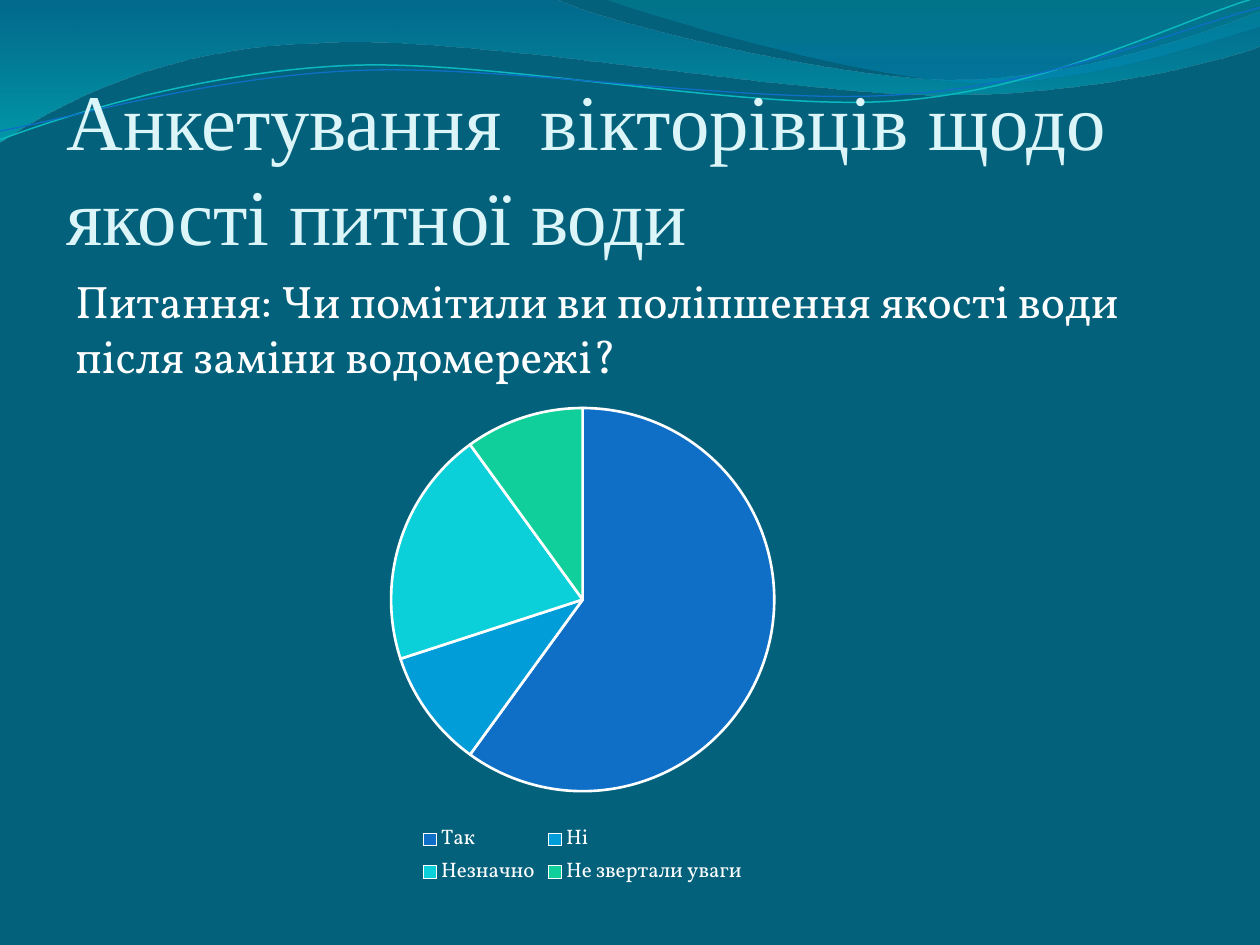
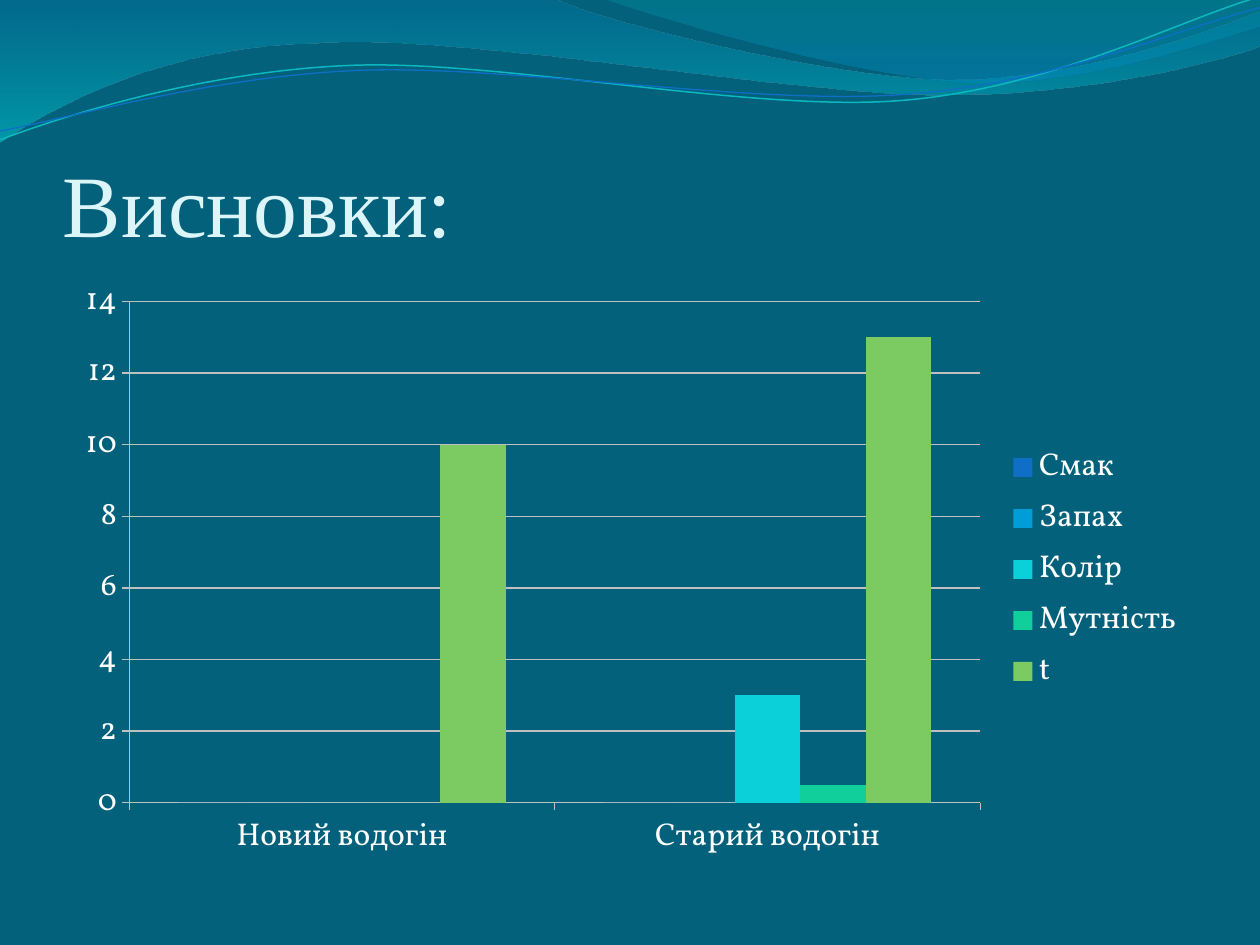
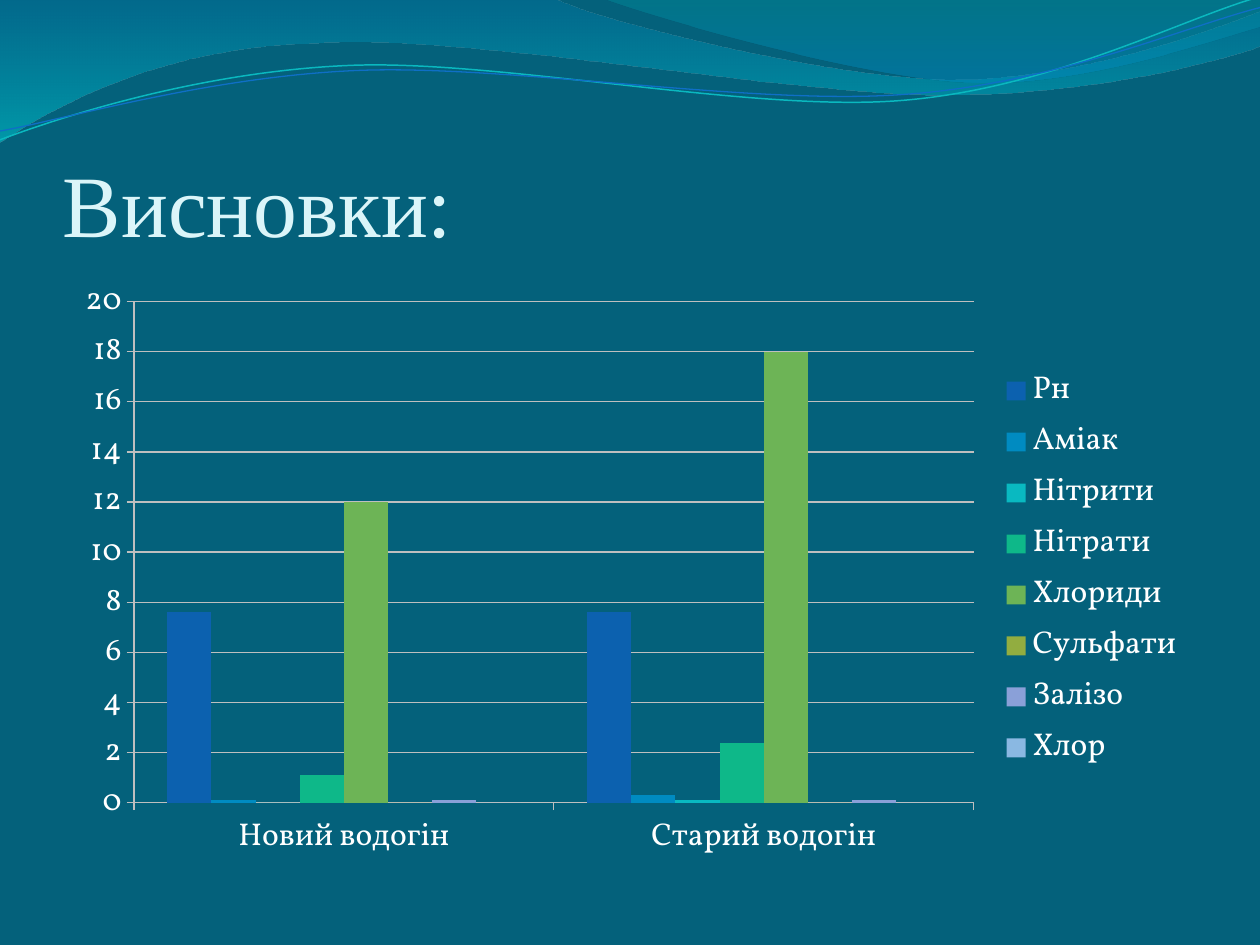
from dataclasses import dataclass

from lxml.etree import SubElement
from pptx import Presentation
from pptx.chart.data import CategoryChartData
from pptx.dml.color import RGBColor
from pptx.enum.chart import XL_CHART_TYPE, XL_LEGEND_POSITION, XL_TICK_MARK
from pptx.enum.text import MSO_ANCHOR
from pptx.oxml.ns import qn
from pptx.util import Pt

PX = 9144


@dataclass(frozen=True)
class Theme:
    """Colours, fonts and type sizes shared by the slides."""
    background: str = "04617B"
    title: str = "DBF5F9"
    text: str = "FFFFFF"
    grid: str = "BFBFBF"
    accents: tuple = ("0F6FC6", "009DD9", "0BD0D9", "10CF9B", "7CCA62")
    shades: tuple = ("0C61AF", "008BC1", "09B9C1", "0EB889",
                     "6DB456", "92AD40", "8AA0D8", "8AB8E2")
    title_font: str = "Times New Roman"
    body_font: str = "Vollkorn"
    title_size: int = 50
    long_title_size: int = 45
    question_size: int = 26
    axis_size: int = 18
    legend_size: int = 12


THEME = Theme()
TITLE_BOX = (50, 77, 900, 125)
CONTENT_BOX = (50, 212, 900, 480)
WATER_PIPES = ("Новий водогін", "Старий водогін")

WAVES = (
    (((0, 0),), ((440, -1),),
     ((476, 17), (664, 63), (758, 63)), ((853, 63), (958, 26), (1000, 9)),
     ((1001, 36),),
     ((983, 44), (870, 76), (746, 75)), ((622, 75), (382, 28), (257, 34)),
     ((129, 36), (46, 83), (-1, 113))),
    (((479, -1),),
     ((509, 11), (682, 62), (769, 65)), ((856, 69), (961, 32), (1000, 21)),
     ((1000, 0),)),
)
WAVE_GRADIENTS = (
    ((0, "0074A1", 45), (100, "00C6CF", 55)),
    ((0, "00A1A9", 30), (80, "008BBF", 45)),
)
RIPPLES = (
    (((0, 111),),
     ((48, 93), (158, 57), (277, 52)), ((395, 47), (593, 89), (713, 80)),
     ((833, 71), (938, 15), (998, -2))),
    (((0, 104),),
     ((47, 96), (164, 61), (283, 56)), ((403, 51), (597, 84), (717, 75)),
     ((836, 67), (941, 21), (1000, 6))),
)
RIPPLE_LINES = (("0AB8BF", 0.85), ("0F6FC6", 0.75))


def rgb(colour):
    """Turn a hex string into a colour."""
    return RGBColor.from_string(colour)


def emu(box):
    """Turn the px lengths of a box into EMU."""
    return [length * PX for length in box]


def add_outline(slide, sections, closed):
    """Add a shadowless freeform of lines (one point) and curves (three points)."""
    (x, y), *rest = [point for section in sections for point in section]
    builder = slide.shapes.build_freeform(x, y, scale=PX)
    builder.add_line_segments(rest, close=closed)
    outline = builder.convert_to_shape()
    outline.shadow.inherit = False
    segments = iter(list(outline._element.iter(qn("a:lnTo"))))
    for section in sections[1:]:
        curve, *others = [next(segments) for _ in section]
        if others:
            curve.tag = qn("a:cubicBezTo")
        for other in others:
            curve.append(other[0])
            other.getparent().remove(other)
    return outline


def fill_gradient(outline, stops):
    """Fill an outline from top to bottom with translucent stops."""
    outline.fill.gradient()
    gradient = outline._element.spPr.find(qn("a:gradFill"))
    stop_list = gradient.find(qn("a:gsLst"))
    for old_stop in list(stop_list):
        stop_list.remove(old_stop)
    for position, colour, opacity in stops:
        stop = SubElement(stop_list, qn("a:gs"), pos=str(position * 1000))
        shade = SubElement(stop, qn("a:srgbClr"), val=colour)
        SubElement(shade, qn("a:alpha"), val=str(opacity * 1000))
    gradient.find(qn("a:lin")).set("ang", "5400000")


def add_water_band(slide):
    """Draw the waves and ripples along the top of a slide."""
    for sections, stops in zip(WAVES, WAVE_GRADIENTS):
        wave = add_outline(slide, sections, True)
        fill_gradient(wave, stops)
        wave.line.fill.background()
    for sections, (colour, width) in zip(RIPPLES, RIPPLE_LINES):
        ripple = add_outline(slide, sections, False)
        ripple.fill.background()
        ripple.line.color.rgb = rgb(colour)
        ripple.line.width = Pt(width)


def style_font(font, size, colour=THEME.text, name=THEME.body_font):
    """Set the size, colour and face of a font."""
    font.size, font.name = Pt(size), name
    font.color.rgb = rgb(colour)


def add_text(slide, box, text, *, size, colour=THEME.text, name=THEME.body_font,
             anchor=MSO_ANCHOR.TOP, insets=(10, 5, 10, 5), before=0):
    """Add a wrapped text box in the given format."""
    frame = slide.shapes.add_textbox(*emu(box)).text_frame
    frame.word_wrap = True
    frame.vertical_anchor = anchor
    (frame.margin_left, frame.margin_top,
     frame.margin_right, frame.margin_bottom) = emu(insets)
    paragraph = frame.paragraphs[0]
    paragraph.space_before = Pt(before)
    run = paragraph.add_run()
    run.text = text
    style_font(run.font, size, colour, name)


def add_title(slide, box, text, size=THEME.title_size):
    """Add a slide title that stands on the bottom of its box."""
    add_text(slide, box, text, size=size, colour=THEME.title, name=THEME.title_font,
             anchor=MSO_ANCHOR.BOTTOM, insets=(0, 5, 0, 0))


def add_water_slide(deck):
    """Add a slide with the shared background and water band."""
    slide = deck.slides.add_slide(deck.slide_layouts[6])
    slide.background.fill.solid()
    slide.background.fill.fore_color.rgb = rgb(THEME.background)
    add_water_band(slide)
    return slide


def add_data_chart(slide, box, kind, categories, series, legend_position, size):
    """Add a chart with a legend in the shared font."""
    data = CategoryChartData()
    data.categories = categories
    for name, values in series.items():
        data.add_series(name, values)
    chart = slide.shapes.add_chart(kind, *emu(box), data).chart
    chart.has_title = False
    style_font(chart.font, size)
    chart.has_legend = True
    chart.legend.position = legend_position
    chart.legend.include_in_layout = False
    style_font(chart.legend.font, size)
    return chart


def place_part(part, before_tag, **fractions):
    """Fix a chart part at fractions of the chart area."""
    layout = part.find(qn("c:layout"))
    if layout is None:
        layout = SubElement(part, qn("c:layout"))
        part.find(qn(before_tag)).addprevious(layout)
    manual = SubElement(layout, qn("c:manualLayout"))
    if before_tag == "c:pieChart":
        SubElement(manual, qn("c:layoutTarget"), val="inner")
    for mode in ("xMode", "yMode"):
        SubElement(manual, qn(f"c:{mode}"), val="edge")
    for side, fraction in fractions.items():
        SubElement(manual, qn(f"c:{side}"), val=str(fraction))


def add_answer_pie(slide, box):
    """Draw the survey answers as a pie."""
    answers = {"Так": 60, "Ні": 10, "Незначно": 20, "Не звертали уваги": 10}
    chart = add_data_chart(slide, box, XL_CHART_TYPE.PIE, answers.keys(),
                           {"Series 1": answers.values()},
                           XL_LEGEND_POSITION.BOTTOM, THEME.legend_size)
    pie = chart.plots[0]
    pie.vary_by_categories = True
    for index, colour in enumerate(THEME.accents[:len(answers)]):
        slice_format = pie.series[0].points[index].format
        slice_format.fill.solid()
        slice_format.fill.fore_color.rgb = rgb(colour)
        slice_format.line.color.rgb = rgb(THEME.text)
        slice_format.line.width = Pt(1.5)
    place_part(chart._chartSpace.chart.plotArea, "c:pieChart", x=0.2, y=0.03, w=0.6, h=0.77)
    place_part(chart.legend._element, "c:overlay", x=0.24, y=0.86, w=0.52, h=0.14)


def add_pipe_columns(slide, box, series, colours):
    """Draw the readings of both water pipes as clustered columns."""
    chart = add_data_chart(slide, box, XL_CHART_TYPE.COLUMN_CLUSTERED, WATER_PIPES, series,
                           XL_LEGEND_POSITION.RIGHT, THEME.axis_size)
    columns = chart.plots[0]
    columns.gap_width, columns.overlap = 150, 0
    columns.vary_by_categories = False
    for reading, colour in zip(columns.series, colours):
        reading.invert_if_negative = False
        reading.format.fill.solid()
        reading.format.fill.fore_color.rgb = rgb(colour)
    chart.value_axis.has_major_gridlines = True
    for axis in (chart.category_axis, chart.value_axis):
        axis.major_tick_mark = XL_TICK_MARK.OUTSIDE
        axis.minor_tick_mark = XL_TICK_MARK.NONE
        style_font(axis.tick_labels.font, THEME.axis_size)
    for ruled in (chart.category_axis, chart.value_axis, chart.value_axis.major_gridlines):
        ruled.format.line.color.rgb = rgb(THEME.grid)
        ruled.format.line.width = Pt(0.75)


def add_survey_slide(deck):
    """Add the slide with the survey question and its answers."""
    slide = add_water_slide(deck)
    add_title(slide, (53, 82, 900, 125), "Анкетування  вікторівців щодо якості питної води",
              THEME.long_title_size)
    add_text(slide, CONTENT_BOX,
             "Питання: Чи помітили ви поліпшення якості води після заміни водомережі?",
             size=THEME.question_size, before=5)
    add_answer_pie(slide, (209, 312, 507, 395))


def add_findings_slide(deck, series, colours):
    """Add a findings slide that compares both water pipes."""
    slide = add_water_slide(deck)
    add_title(slide, TITLE_BOX, "Висновки:")
    add_pipe_columns(slide, CONTENT_BOX, series, colours)


def main():
    """Build and save the deck."""
    deck = Presentation()
    deck.slide_width, deck.slide_height = emu((1000, 750))
    add_survey_slide(deck)
    add_findings_slide(deck, {
        "Смак": (0, 0), "Запах": (0, 0), "Колір": (0, 3),
        "Мутність": (0, 0.5), "t": (10, 13),
    }, THEME.accents)
    add_findings_slide(deck, {
        "Рн": (7.6, 7.6), "Аміак": (0.1, 0.3), "Нітрити": (0, 0.1), "Нітрати": (1.1, 2.4),
        "Хлориди": (12, 18), "Сульфати": (0, 0), "Залізо": (0.1, 0.1), "Хлор": (0, 0),
    }, THEME.shades)
    deck.save("out.pptx")


if __name__ == "__main__":
    main()
